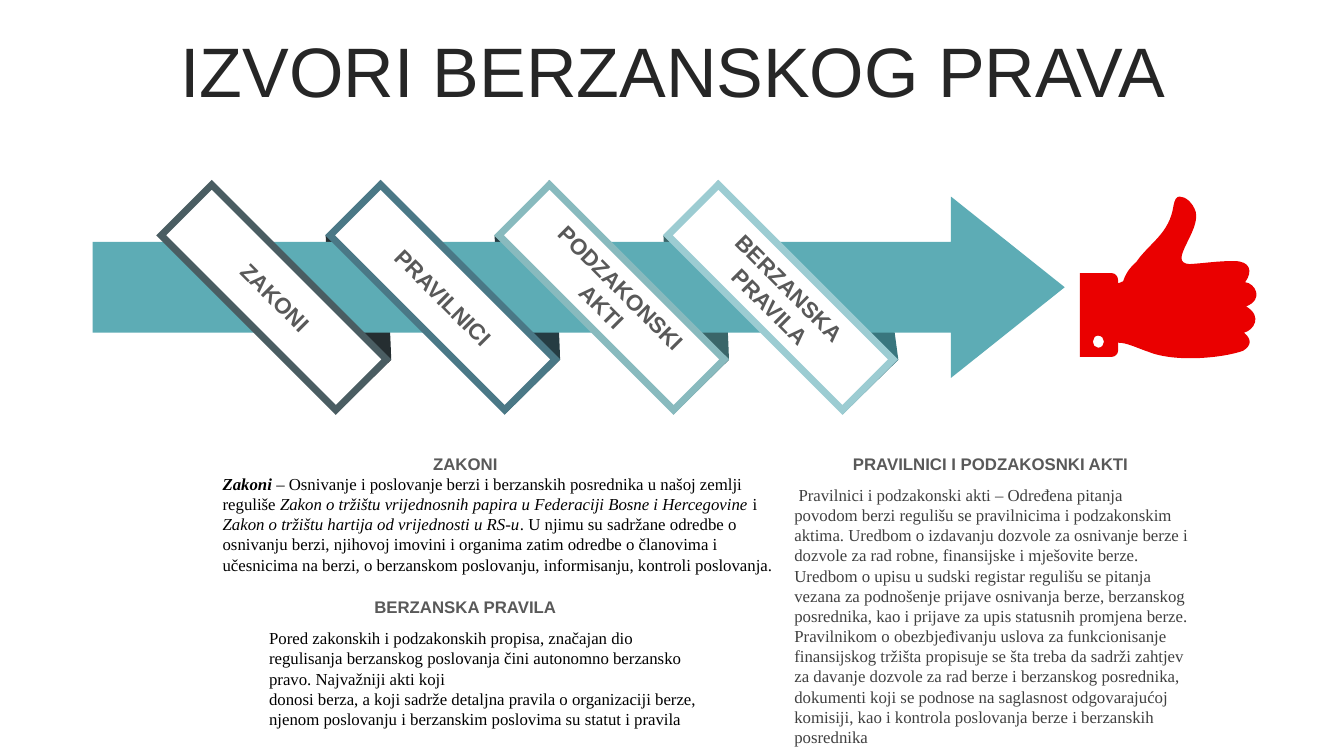
from lxml import etree
from pptx import Presentation
from pptx.dml.color import RGBColor
from pptx.enum.shapes import MSO_SHAPE
from pptx.enum.text import MSO_ANCHOR, MSO_AUTO_SIZE, PP_ALIGN
from pptx.oxml.ns import qn
from pptx.util import Inches, Pt

COLORS = {
    "title": "262626", "heading": "595959", "black": "000000", "gray": "404040",
    "white": "FFFFFF", "arrow": "5DACB5", "thumb": "EA0000",
}
SANS, SERIF = "Arial", "Times New Roman"
BAND_PITCH, LABEL_PITCH = 1.675, 5 / 3

# label, number of text lines, border colour, fold colour
BANDS = [
    ("ZAKONI", 1, "4A5D62", "252E31"),
    ("PRAVILNICI", 1, "4A7886", "253C43"),
    ("PODZAKONSKI AKTI", 2, "88BABE", "3A6669"),
    ("BERZANSKA PRAVILA", 2, "9CCCD2", "39767E"),
]

# Contours: a start point, then lines (x, y) and cubic curves (x1, y1, x2, y2, x, y)
FOLD = [(0, 0.55), (0.1, 2.32), (0.65, 1.78),
        (0.63, 1.16, 0.59, 0.89, 0.54, 0), (0.37, 0.19, 0.17, 0.38, 0, 0.55)]
LAST_FOLD = [(0, 0.04), (0.72, 0), (0.84, 0.89), (0.29, 1.43),
             (0.18, 0.98, 0.12, 0.49, 0, 0.04)]
THUMB = [(0.99, 0), (1.05, 0, 1.12, 0.06, 1.15, 0.15),
         (1.2, 0.35, 0.86, 0.66, 1.09, 0.67), (1.26, 0.66, 1.35, 0.64, 1.53, 0.64),
         (1.69, 0.64, 1.72, 0.74, 1.64, 0.85), (1.74, 0.86, 1.83, 1.02, 1.65, 1.09),
         (1.82, 1.19, 1.72, 1.33, 1.63, 1.35), (1.71, 1.42, 1.7, 1.48, 1.62, 1.53),
         (1.43, 1.6, 0.95, 1.65, 0.68, 1.54), (0.56, 1.5, 0.47, 1.45, 0.38, 1.45),
         (0.38, 1.53), (0.38, 1.56, 0.35, 1.59, 0.32, 1.59),
         (0, 1.59), (0, 0.76), (0.32, 0.76), (0.35, 0.76, 0.38, 0.79, 0.38, 0.83),
         (0.38, 0.86), (0.39, 0.86, 0.41, 0.85, 0.43, 0.84),
         (0.45, 0.78, 0.48, 0.72, 0.56, 0.65), (0.69, 0.46, 0.89, 0.37, 0.93, 0.09),
         (0.94, 0.03, 0.96, 0, 0.99, 0)]
CUFF_BUTTON = [(0.18, 1.38), (0.15, 1.38, 0.13, 1.41, 0.13, 1.44),
               (0.13, 1.47, 0.15, 1.5, 0.18, 1.5), (0.22, 1.5, 0.24, 1.47, 0.24, 1.44),
               (0.24, 1.41, 0.22, 1.38, 0.18, 1.38)]

ZAKONI_TEXT = [
    ("Zakoni ", True, True),
    ("– Osnivanje i poslovanje berzi i berzanskih posrednika u našoj zemlji reguliše ", False, False),
    ("Zakon o tržištu vrijednosnih papira u Federaciji Bosne i Hercegovine ", False, True),
    ("i ", False, False),
    ("Zakon o tržištu hartija od vrijednosti u RS-u", False, True),
    (". U njimu su sadržane odredbe o osnivanju berzi, njihovoj imovini i organima zatim "
     "odredbe o članovima i učesnicima na berzi, o berzanskom poslovanju, informisanju, "
     "kontroli poslovanja.", False, False),
]
AKTI_TEXT = [(
    " Pravilnici i podzakonski akti – Određena pitanja povodom berzi regulišu se pravilnicima "
    "i podzakonskim aktima. Uredbom o izdavanju dozvole za osnivanje berze i dozvole za rad "
    "robne, finansijske i mješovite berze. Uredbom o upisu u sudski registar regulišu se "
    "pitanja vezana za podnošenje prijave osnivanja berze, berzanskog posrednika, kao i "
    "prijave za upis statusnih promjena berze. Pravilnikom o obezbjeđivanju uslova za "
    "funkcionisanje finansijskog tržišta propisuje se šta treba da sadrži zahtjev za davanje "
    "dozvole za rad berze i berzanskog posrednika, dokumenti koji se podnose na saglasnost "
    "odgovarajućoj komisiji, kao i kontrola poslovanja berze i berzanskih posrednika",
    False, False)]
PRAVILA_TEXT = [(
    "Pored zakonskih i podzakonskih propisa, značajan dio\n"
    "regulisanja berzanskog poslovanja čini autonomno berzansko pravo. Najvažniji akti koji\n"
    "donosi berza, a koji sadrže detaljna pravila o organizaciji berze, njenom poslovanju i "
    "berzanskim poslovima su statut i pravila", False, False)]


def rgb(color):
    return RGBColor.from_string(color)


def paint(shape, fill, border=None):
    shape.shadow.inherit = False
    shape.fill.solid()
    shape.fill.fore_color.rgb = rgb(fill)
    if border:
        shape.line.color.rgb = rgb(border)
        shape.line.width = Pt(5)
        outline = shape._element.spPr.find(qn("a:ln"))
        etree.SubElement(outline, qn("a:miter"), lim="800000")
    else:
        shape.line.fill.background()


def add_text(slide, box, runs, size, font, color, align=PP_ALIGN.LEFT):
    """Add a wrapped text box from (text, bold, italic) runs; newlines become line breaks."""
    text_box = slide.shapes.add_textbox(*map(Inches, box))
    text_box.text_frame.word_wrap = True
    text_box.text_frame.auto_size = MSO_AUTO_SIZE.SHAPE_TO_FIT_TEXT
    paragraph = text_box.text_frame.paragraphs[0]
    paragraph.alignment = align
    for text, bold, italic in runs:
        for number, line in enumerate(text.split("\n")):
            if number:
                paragraph.add_line_break()
            run = paragraph.add_run()
            run.text = line
            run.font.size, run.font.name = Pt(size), font
            run.font.bold, run.font.italic = bold, italic
            run.font.color.rgb = rgb(color)
    return text_box


def add_outline(slide, box, contours, fill):
    """Add a freeform filling the box, then write its lines and cubic curves."""
    left, top, width, height = map(Inches, box)
    builder = slide.shapes.build_freeform(left, top)
    builder.add_line_segments([(left + width, top), (left + width, top + height)])
    outline = builder.convert_to_shape()
    drawing = outline._element.xpath(".//a:path")[0]
    for command in list(drawing):
        drawing.remove(command)
    for contour in contours:
        for number, segment in enumerate(contour):
            tag = "a:moveTo" if number == 0 else "a:lnTo" if len(segment) == 2 else "a:cubicBezTo"
            command = etree.SubElement(drawing, qn(tag))
            for x, y in zip(segment[::2], segment[1::2]):
                etree.SubElement(command, qn("a:pt"), x=str(Inches(x)), y=str(Inches(y)))
        etree.SubElement(drawing, qn("a:close"))
    paint(outline, fill)


def add_title(slide, box):
    title = add_text(slide, box, [("IZVORI BERZANSKOG PRAVA", False, False)],
                     50, SANS, COLORS["title"], PP_ALIGN.CENTER)
    title.text_frame.auto_size = MSO_AUTO_SIZE.NONE
    title.text_frame.vertical_anchor = MSO_ANCHOR.MIDDLE
    title.text_frame.paragraphs[0].line_spacing = 0.8
    title.text_frame.paragraphs[0].space_before = Pt(10)


def add_ribbon_arrow(slide, box):
    """Arrow wrapped by four diagonal bands, with the folds behind it."""
    left, top, width, height = box
    middle = top + height / 2 + 0.1
    for index, (_, _, _, fold_color) in enumerate(BANDS[:-1]):
        fold_box = (left + 2.31 + index * BAND_PITCH, top - 0.16, 0.65, 2.32)
        add_outline(slide, fold_box, [FOLD], fold_color)
    add_outline(slide, (left + 7.15, top + 0.73, 0.84, 1.44), [LAST_FOLD], BANDS[-1][3])

    arrow = slide.shapes.add_shape(MSO_SHAPE.RIGHT_ARROW, *map(Inches, box))
    arrow.adjustments[1] = 0.627
    paint(arrow, COLORS["arrow"])

    for index, (_, _, border, _) in enumerate(BANDS):
        band = slide.shapes.add_shape(
            MSO_SHAPE.RECTANGLE, Inches(left + 0.57 + index * BAND_PITCH),
            Inches(middle - 0.355), Inches(2.45), Inches(0.71))
        band.rotation = 45
        paint(band, COLORS["white"], border)

    for index, (name, lines, _, _) in enumerate(BANDS):
        label_height = 0.1 + 0.27 * lines
        label_box = (left + 0.75 + index * LABEL_PITCH, middle - label_height / 2,
                     2.12, label_height)
        label = add_text(slide, label_box, [(name, True, False)], 16, SANS,
                         COLORS["heading"], PP_ALIGN.CENTER)
        label.rotation = 45


def add_section(slide, heading_box, heading, body_box, runs, color):
    add_text(slide, body_box, runs, 12, SERIF, color)
    add_text(slide, heading_box, [(heading, True, False)], 12, SANS,
             COLORS["heading"], PP_ALIGN.CENTER)


def main():
    presentation = Presentation()
    presentation.slide_width, presentation.slide_height = Inches(13.33), Inches(7.5)
    slide = presentation.slides.add_slide(presentation.slide_layouts[6])

    add_title(slide, (0.35, 0.37, 12.66, 0.79))
    add_ribbon_arrow(slide, (0.92, 1.95, 9.64, 1.8))
    add_outline(slide, (10.71, 1.95, 1.76, 1.61), [CUFF_BUTTON, THUMB], COLORS["thumb"])
    add_section(slide, (2.57, 4.45, 4.09, 0.3), "ZAKONI",
                (2.11, 4.65, 5.77, 1.11), ZAKONI_TEXT, COLORS["black"])
    add_section(slide, (7.78, 4.45, 4.09, 0.3), "PRAVILNICI I PODZAKOSNKI AKTI",
                (7.78, 4.76, 4.12, 2.73), AKTI_TEXT, COLORS["gray"])
    add_section(slide, (2.57, 5.87, 4.09, 0.3), "BERZANSKA PRAVILA",
                (2.57, 6.18, 4.52, 1.11), PRAVILA_TEXT, COLORS["black"])
    presentation.save("out.pptx")


if __name__ == "__main__":
    main()
